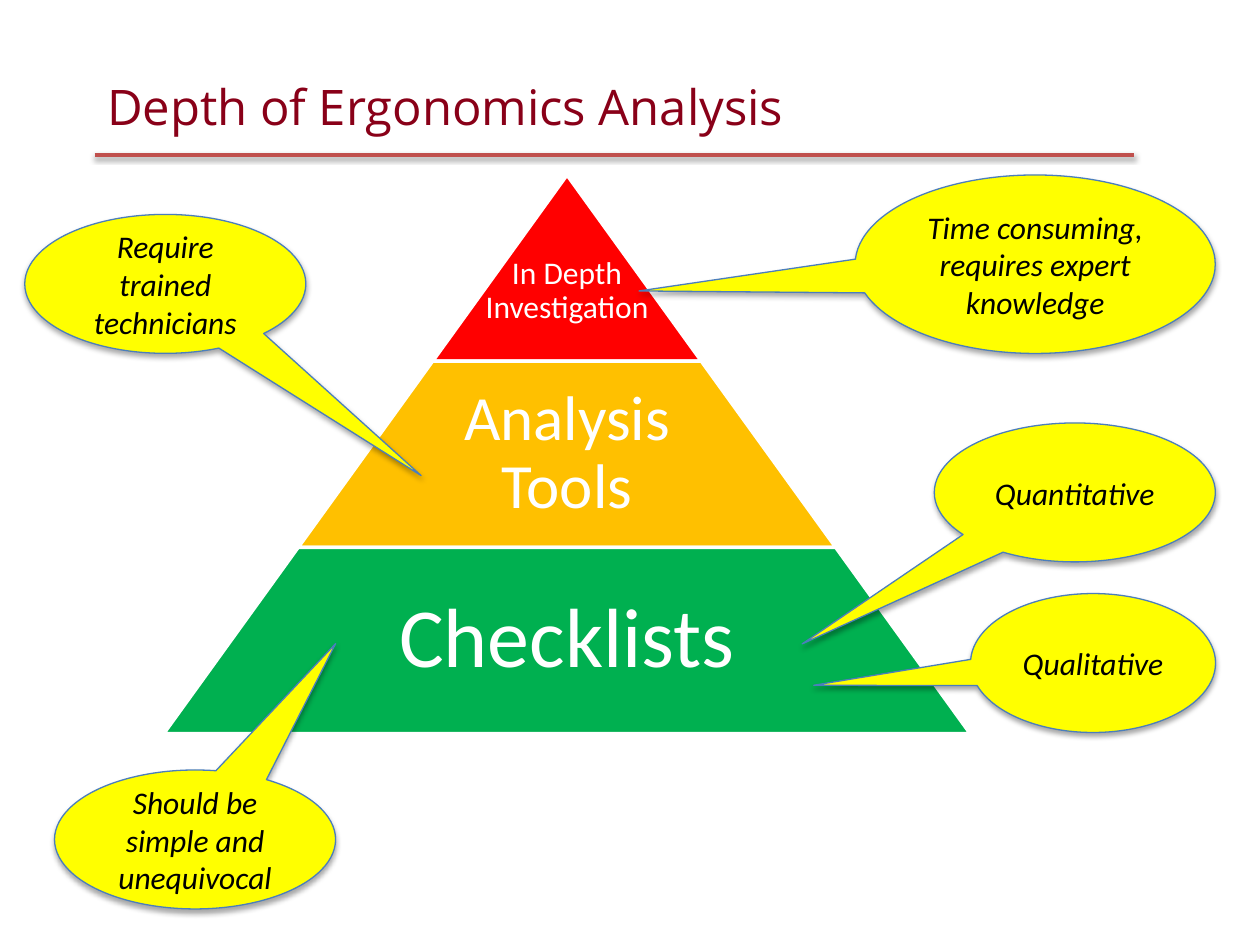
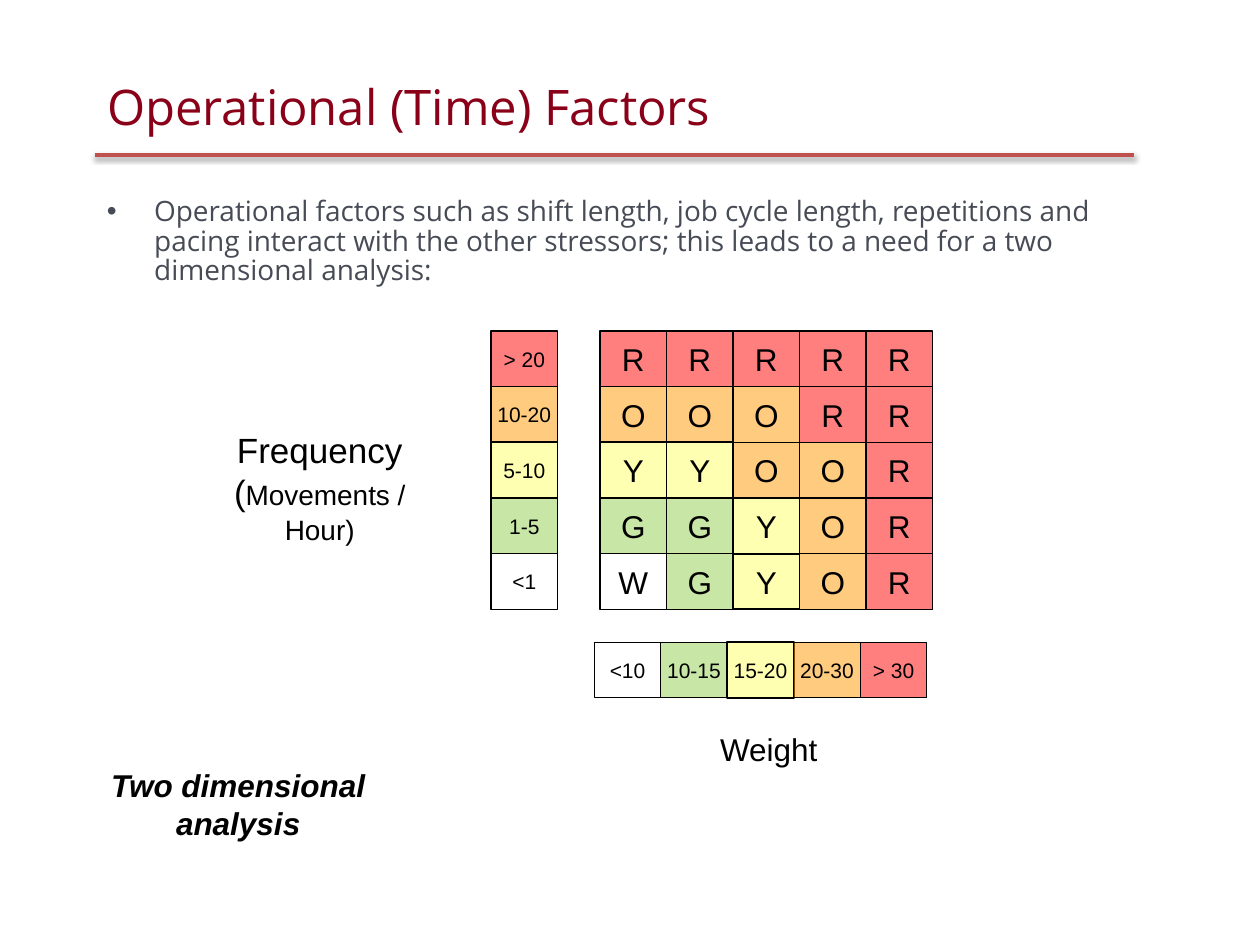
"""Build two slides on the depth of ergonomics analysis and operational time factors."""
from lxml import etree
from pptx import Presentation
from pptx.dml.color import RGBColor
from pptx.enum import shapes, text
from pptx.oxml import ns
from pptx.util import Pt

MAROON = RGBColor(0x89, 0x00, 0x18)
RULE_RED = RGBColor(0xC0, 0x50, 0x4D)
SLATE = RGBColor(0x47, 0x4B, 0x55)
BLACK = RGBColor(0, 0, 0)
WHITE = RGBColor(0xFF, 0xFF, 0xFF)
RED = RGBColor(0xFF, 0, 0)
AMBER = RGBColor(0xFF, 0xC0, 0)
GREEN = RGBColor(0, 0xB0, 0x50)
YELLOW = RGBColor(0xFF, 0xFF, 0)
CALLOUT_BLUE = RGBColor(0x4B, 0x7E, 0xBC)
RISK_COLOURS = {
    "R": RED,
    "O": RGBColor(0xFF, 0x99, 0),
    "Y": RGBColor(0xFF, 0xFF, 0x66),
    "G": RGBColor(0x92, 0xD0, 0x50),
    "W": WHITE,
}


def add_shadow(shape, distance, opacity):
    effects = etree.SubElement(shape._element.spPr, ns.qn("a:effectLst"))
    shadow = etree.SubElement(effects, ns.qn("a:outerShdw"), blurRad=str(Pt(3.1)),
                              dist=str(Pt(distance)), dir="5400000", rotWithShape="0")
    colour = etree.SubElement(shadow, ns.qn("a:srgbClr"), val="000000")
    etree.SubElement(colour, ns.qn("a:alpha"), val=str(opacity * 1000))


def write(box, words, size, font, colour, align=text.PP_ALIGN.CENTER):
    box.text_frame.word_wrap = True
    para = box.text_frame.paragraphs[0]
    para.text = words
    para.alignment = align
    para.font.size = Pt(size)
    para.font.name = font
    para.font.color.rgb = colour
    return para


deck = Presentation()
deck.slide_width, deck.slide_height = Pt(720), Pt(540)

pages = []
for heading in ("Depth of Ergonomics Analysis", "Operational (Time) Factors"):
    page = deck.slides.add_slide(deck.slide_layouts[5])
    title = page.shapes.title
    title.left, title.top, title.width, title.height = Pt(54), Pt(40), Pt(594), Pt(48)
    title.text_frame.vertical_anchor = text.MSO_ANCHOR.TOP
    write(title, heading, 28, "Open Sans", MAROON, text.PP_ALIGN.LEFT)
    rule = page.shapes.add_connector(shapes.MSO_CONNECTOR.STRAIGHT,
                                     Pt(54), Pt(88.5), Pt(648), Pt(88.5))
    rule.line.color.rgb = RULE_RED
    rule.line.width = Pt(2)
    add_shadow(rule, 1.6, 38)
    pages.append(page)
depth_page, factors_page = pages

PYRAMID_CENTRE, PYRAMID_TOP = 324, 100
LEVEL_WIDTH, LEVEL_HEIGHT = 153.6, 106.4
levels = [
    ("In Depth Investigation", RED, 18, 153.6, 2, 28),
    ("Analysis Tools", AMBER, 36, 200, 4, 4),
    ("Checklists", GREEN, 48, 300, 5, 5),
]
for number, (words, colour, size, text_width, inset, top_inset) in enumerate(levels):
    top = PYRAMID_TOP + number * LEVEL_HEIGHT
    width = LEVEL_WIDTH * (number + 1)
    level = depth_page.shapes.add_shape(
        shapes.MSO_SHAPE.TRAPEZOID, Pt(PYRAMID_CENTRE - width / 2), Pt(top),
        Pt(width), Pt(LEVEL_HEIGHT))
    level.adjustments[0] = LEVEL_WIDTH / 2 / LEVEL_HEIGHT
    level.shadow.inherit = False
    level.fill.solid()
    level.fill.fore_color.rgb = colour
    level.line.color.rgb = WHITE
    level.line.width = Pt(2)
    label = depth_page.shapes.add_textbox(
        Pt(PYRAMID_CENTRE - text_width / 2), Pt(top), Pt(text_width), Pt(LEVEL_HEIGHT))
    frame = label.text_frame
    frame.margin_left = frame.margin_right = frame.margin_bottom = Pt(inset)
    frame.margin_top = Pt(top_inset)
    frame.vertical_anchor = text.MSO_ANCHOR.MIDDLE
    para = write(label, words, size, "Calibri", WHITE)
    para.line_spacing = 0.9
    para.space_after = Pt(0.35 * size)

callouts = [
    ("Qualitative", 554.6, 339.2, 140, 79.4, -1.14, 0.16),
    ("Quantitative", 533.9, 241.7, 160.6, 79.4, -0.97, 1.09),
    ("Time consuming, requires expert knowledge", 488.7, 100, 205.8, 102, -1.1, 0.15),
    ("Require trained technicians", 14.2, 122.5, 160.6, 79.4, 0.91, 1.38),
    ("Should be simple and unequivocal", 31.2, 440, 160.6, 79.4, 0.5, -1.41),
]
for words, left, top, width, height, tip_x, tip_y in callouts:
    callout = depth_page.shapes.add_shape(
        shapes.MSO_SHAPE.OVAL_CALLOUT, Pt(left), Pt(top), Pt(width), Pt(height))
    callout.adjustments[0], callout.adjustments[1] = tip_x, tip_y
    callout.fill.solid()
    callout.fill.fore_color.rgb = YELLOW
    callout.line.color.rgb = CALLOUT_BLUE
    callout.line.width = Pt(0.75)
    add_shadow(callout, 1.8, 35)
    callout.text_frame.vertical_anchor = text.MSO_ANCHOR.MIDDLE
    write(callout, words, 18, "Calibri", BLACK).font.italic = True

body = factors_page.shapes.add_textbox(Pt(54), Pt(109.5), Pt(594), Pt(72))
para = body.text_frame.paragraphs[0]
properties = para._p.get_or_add_pPr()
properties.set("marL", str(Pt(27)))
properties.set("indent", str(Pt(-27)))
etree.SubElement(properties, ns.qn("a:buFont"), typeface="Arial")
etree.SubElement(properties, ns.qn("a:buChar"), char="•")
write(body, "Operational factors such as shift length, job cycle length, repetitions and pacing "
      "interact with the other stressors; this leads to a need for a two dimensional analysis:",
      16, "Open Sans", SLATE, text.PP_ALIGN.LEFT)
para.line_spacing = 0.88

weight = factors_page.shapes.add_textbox(Pt(291), Pt(413.5), Pt(296.6), Pt(36))
write(weight, "Weight", 18, "Arial", BLACK)

frequency = factors_page.shapes.add_textbox(Pt(105), Pt(241.5), Pt(155.5), Pt(79))
para = write(frequency, "Frequency (", 20, "Arial", BLACK)
span = para.add_run()
span.text = "Movements / Hour)"
span.font.size = Pt(16)

CELL_WIDTH, CELL_HEIGHT = 38, 31.8
GRID_LEFT, GRID_TOP = 342.9, 189.2
cells = []
for row, (words, risk) in enumerate(zip(("> 20", "10-20", "5-10", "1-5", "<1"), "ROYGW")):
    cells.append((words, risk, 280.6, GRID_TOP + row * CELL_HEIGHT, 12))
for column, (words, risk) in enumerate(zip(("<10", "10-15", "15-20", "20-30", "> 30"), "WGYOR")):
    cells.append((words, risk, 339.6 + column * CELL_WIDTH, 367, 12))
for row, risks in enumerate(("RRRRR", "OOORR", "YYOOR", "GGYOR", "WGYOR")):
    for column, risk in enumerate(risks):
        cells.append((risk, risk, GRID_LEFT + column * CELL_WIDTH,
                      GRID_TOP + row * CELL_HEIGHT, 18))

for words, risk, left, top, size in cells:
    cell = factors_page.shapes.add_shape(
        shapes.MSO_SHAPE.RECTANGLE, Pt(left), Pt(top), Pt(CELL_WIDTH), Pt(CELL_HEIGHT))
    cell.shadow.inherit = False
    cell.fill.solid()
    cell.fill.fore_color.rgb = RISK_COLOURS[risk]
    fill_colour = cell._element.spPr.find(ns.qn("a:solidFill"))[0]
    etree.SubElement(fill_colour, ns.qn("a:alpha"), val="50000")
    cell.line.color.rgb = BLACK
    cell.line.width = Pt(1 if risk == "Y" else 0.75)
    cell.text_frame.vertical_anchor = text.MSO_ANCHOR.MIDDLE
    write(cell, words, size, "Arial", BLACK)
    cell.text_frame.word_wrap = False

caption = factors_page.shapes.add_textbox(Pt(54), Pt(434.2), Pt(164.2), Pt(51))
para = write(caption, "Two dimensional analysis", 18, "Arial", BLACK)
para.font.bold = para.font.italic = True

deck.save("out.pptx")
